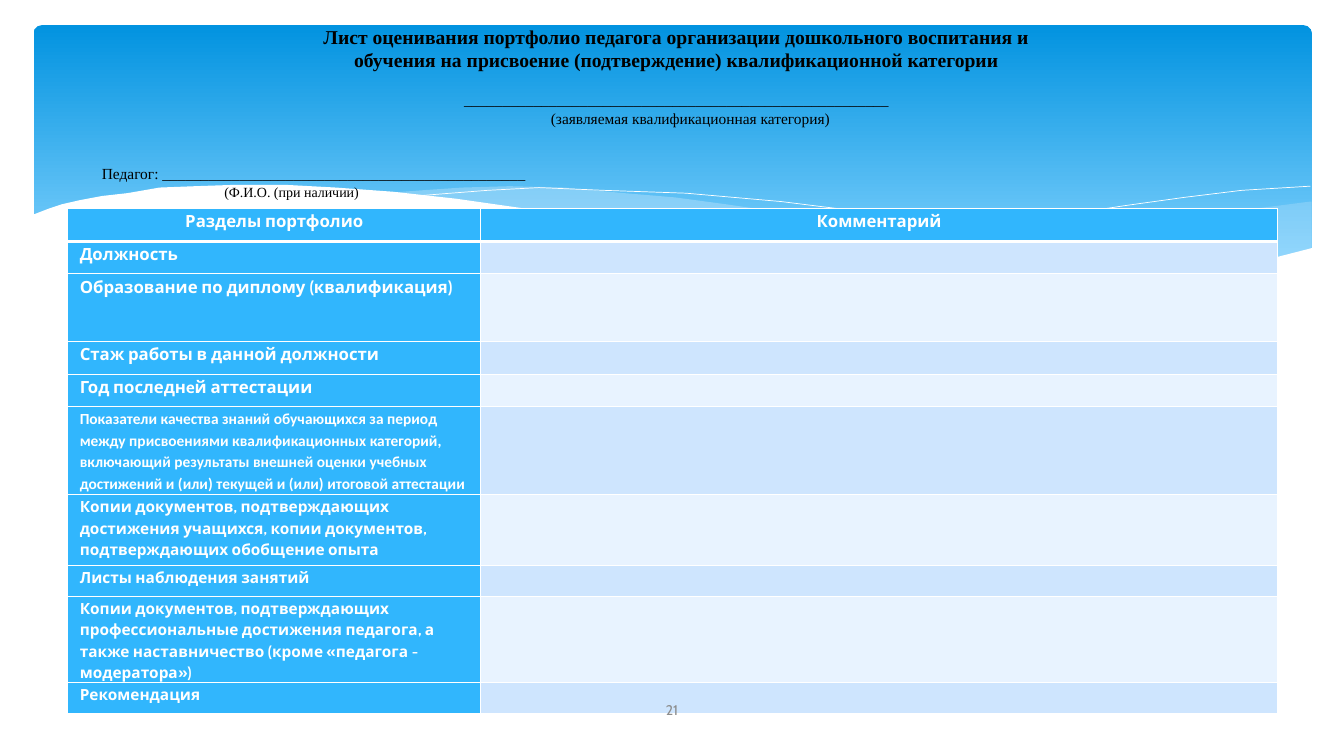
from lxml.etree import SubElement
from pptx import Presentation
from pptx.dml.color import RGBColor
from pptx.enum.shapes import MSO_SHAPE
from pptx.enum.text import MSO_ANCHOR, MSO_AUTO_SIZE, PP_ALIGN
from pptx.oxml.ns import qn
from pptx.util import Pt

COLORS = {
    "sky_top": "0293E0", "sky_bottom": "83D3FE", "wave": "C6E7FC",
    "white": "FFFFFF", "black": "000000", "number": "8C8C8C",
    "label": "31B6FD", "band_dark": "CEE5FE", "band_light": "E8F3FF",
}
SERIF, SANS = "Times New Roman", "Cabin"

RIGHT_WAVE = [
    (936, 144), (897, 149), (855, 155.5), (826, 160.5), (773, 170.5),
    (724, 178.5), (677.5, 185), (635, 191), (677, 195), (715, 198),
    (771, 200), (819, 198.5), (861, 194.5), (898, 188.5), (937, 178), (937, 144),
]
MIDDLE_WAVE = [
    (857, 196.5), (803, 191), (744, 183), (677.5, 173), (604, 160), (560, 152),
    (519, 146), (482, 141), (446, 137.5), (403, 134.5), (364, 133), (330.5, 134),
    (301, 135.5), (275, 137.5), (310, 141), (348, 146), (388, 152), (431, 160),
    (508, 173), (577, 183.5), (639, 191), (696, 196), (747, 199.5), (794, 200),
    (841, 198),
]
LONG_CREST = [
    (297, 140.5), (322, 137.5), (348, 136), (385, 134.5), (432, 135.5), (490, 138),
    (558, 144), (638, 153.5), (730, 168), (798, 180.5), (871, 196),
]
SHORT_CREST = [
    (589, 185), (645, 173.5), (692, 165), (745, 155.5), (803, 147), (846, 141),
    (887, 136.5), (936, 133),
]
WHITE_WAVE = [
    (938, 177), (903, 186.5), (863, 193.5), (817, 197.5), (762, 199), (698, 196),
    (642, 191), (579, 183), (508, 172), (429, 158.5), (375, 149), (326, 141.5),
    (281, 137), (240, 134), (203, 132.5), (169, 132.5), (140, 133), (114, 134.5),
    (91, 137.5), (73, 140.5), (57, 143), (44, 146), (35, 149), (22, 153.5),
    (22, 237), (938, 237),
]
SECTIONS = [
    ("Должность", 23, 12, SANS),
    ("Образование по диплому (квалификация)", 48.5, 12, SANS),
    ("Стаж работы в данной должности", 23.5, 12, SANS),
    ("Год последнeй аттестации", 23, 12, SANS),
    ("Показатели качества знаний обучающихся за период между присвоениями "
     "квалификационных категорий, включающий результаты внешней оценки учебных "
     "достижений и (или) текущей и (или) итоговой аттестации", 63, 11, "Calibri"),
    ("Копии документов, подтверждающих достижения учащихся, копии документов, "
     "подтверждающих обобщение опыта", 50.5, 11, SANS),
    ("Листы наблюдения занятий", 22, 11, SANS),
    ("Копии документов, подтверждающих профессиональные достижения педагога, а "
     "также наставничество (кроме «педагога - модератора»)", 61, 11, SANS),
    ("Рекомендация", 22, 11, SANS),
]


def rgb(name):
    return RGBColor.from_string(COLORS[name])


def write(p, text, size=11, font=SERIF, color="black", bold=False,
          align=PP_ALIGN.LEFT, spacing=1.0, before=0, indent=0):
    p.alignment, p.line_spacing, p.space_before = align, spacing, Pt(before)
    if indent:
        p._p.get_or_add_pPr().set("marL", str(Pt(indent)))
    r = p.add_run()
    r.text = text
    r.font.size, r.font.name, r.font.bold = Pt(size), font, bold
    r.font.color.rgb = rgb(color)


def add_sky(s):
    sp = s.shapes.add_shape(MSO_SHAPE.ROUNDED_RECTANGLE, Pt(24), Pt(18), Pt(913), Pt(194.5))
    sp.adjustments[0] = 0.03
    sp.shadow.inherit = False
    sp.line.fill.background()
    sp.fill.gradient()
    sp.fill.gradient_angle = 270
    stops = zip(sp.fill.gradient_stops, ("sky_top", "sky_bottom"), (0, 0.9))
    for stop, color, position in stops:
        stop.color.rgb, stop.position = rgb(color), position


def add_curve(s, points, closed):
    builder = s.shapes.build_freeform(*points[0], scale=Pt(1))
    builder.add_line_segments(points[1:], close=closed)
    sp = builder.convert_to_shape()
    sp.shadow.inherit = False
    return sp


def add_wave(s, points, color, opacity=100):
    sp = add_curve(s, points, True)
    sp.line.fill.background()
    sp.fill.solid()
    sp.fill.fore_color.rgb = rgb(color)
    if opacity < 100:
        clr = sp.fill._xPr.find(qn("a:solidFill"))[0]
        SubElement(clr, qn("a:alpha"), val=str(opacity * 1000))


def add_crest(s, points):
    sp = add_curve(s, points, False)
    sp.fill.background()
    sp.line.color.rgb = rgb("white")
    sp.line.width = Pt(0.5)


def format_cell(cell, color, top=1, bottom=1):
    tcPr = cell._tc.get_or_add_tcPr()
    for side, width in (("L", 1), ("R", 1), ("T", top), ("B", bottom)):
        ln = SubElement(tcPr, qn("a:ln" + side), w=str(Pt(width)))
        fill = SubElement(ln, qn("a:solidFill"))
        SubElement(fill, qn("a:srgbClr"), val=COLORS["white"])
    cell.fill.solid()
    cell.fill.fore_color.rgb = rgb(color)
    cell.margin_left = cell.margin_right = Pt(8.5)
    cell.margin_top = cell.margin_bottom = 0


def add_portfolio_table(s):
    heights = [23.5] + [height for _, height, _, _ in SECTIONS]
    frame = s.shapes.add_table(len(heights), 2, Pt(48.5), Pt(149), Pt(864), Pt(sum(heights)))
    table = frame.table
    table.first_row = table.horz_banding = False
    table.columns[0].width, table.columns[1].width = Pt(295), Pt(569)
    for row, height in zip(table.rows, heights):
        row.height = Pt(height)
    for col, text in enumerate(("Разделы портфолио", "Комментарий")):
        cell = table.cell(0, col)
        format_cell(cell, "label", bottom=3)
        write(cell.text_frame.paragraphs[0], text, 12, SANS, "white", True,
              PP_ALIGN.CENTER, 1.15)
    for i, (text, _, size, font) in enumerate(SECTIONS, 1):
        top = 3 if i == 1 else 1
        label = table.cell(i, 0)
        format_cell(label, "label", top)
        format_cell(table.cell(i, 1), "band_dark" if i % 2 else "band_light", top)
        write(label.text_frame.paragraphs[0], text, size, font, "white", True, spacing=1.15)


def add_page_number(s):
    sp = s.shapes.add_textbox(Pt(419), Pt(492.5), Pt(122), Pt(29))
    tf = sp.text_frame
    tf.word_wrap = True
    tf.vertical_anchor = MSO_ANCHOR.MIDDLE
    write(tf.paragraphs[0], "21", 10, SANS, "number", align=PP_ALIGN.CENTER)


def fill_title(s):
    sp = s.shapes.title
    sp.left, sp.top, sp.width, sp.height = Pt(45.5), Pt(17.5), Pt(875.5), Pt(130)
    s.shapes.element.append(sp.element)
    tf = sp.text_frame
    tf.auto_size, tf.word_wrap = MSO_AUTO_SIZE.NONE, True
    tf.vertical_anchor = MSO_ANCHOR.TOP
    tf.margin_top = tf.margin_bottom = 0
    heading = dict(size=14, bold=True, align=PP_ALIGN.CENTER)
    centred = dict(align=PP_ALIGN.CENTER)
    lines = [
        ("Лист оценивания портфолио педагога организации дошкольного воспитания и", heading),
        ("обучения на присвоение (подтверждение) квалификационной категории", heading),
        ("_" * 55, dict(centred, before=13.5)),
        ("(заявляемая квалификационная категория)", dict(centred, indent=20)),
        ("Педагог: " + "_" * 47, dict(before=26.5)),
        ("(Ф.И.О. (при наличии)", dict(size=10, indent=107.5)),
    ]
    for i, (text, style) in enumerate(lines):
        p = tf.add_paragraph() if i else tf.paragraphs[0]
        write(p, text, **style)


def main():
    prs = Presentation()
    prs.slide_width, prs.slide_height = Pt(960), Pt(540)
    s = prs.slides.add_slide(prs.slide_layouts[5])
    add_sky(s)
    add_wave(s, RIGHT_WAVE, "wave", 29)
    add_wave(s, MIDDLE_WAVE, "wave", 40)
    add_crest(s, LONG_CREST)
    add_crest(s, SHORT_CREST)
    add_wave(s, WHITE_WAVE, "white")
    add_portfolio_table(s)
    add_page_number(s)
    fill_title(s)
    prs.save("out.pptx")


if __name__ == "__main__":
    main()
